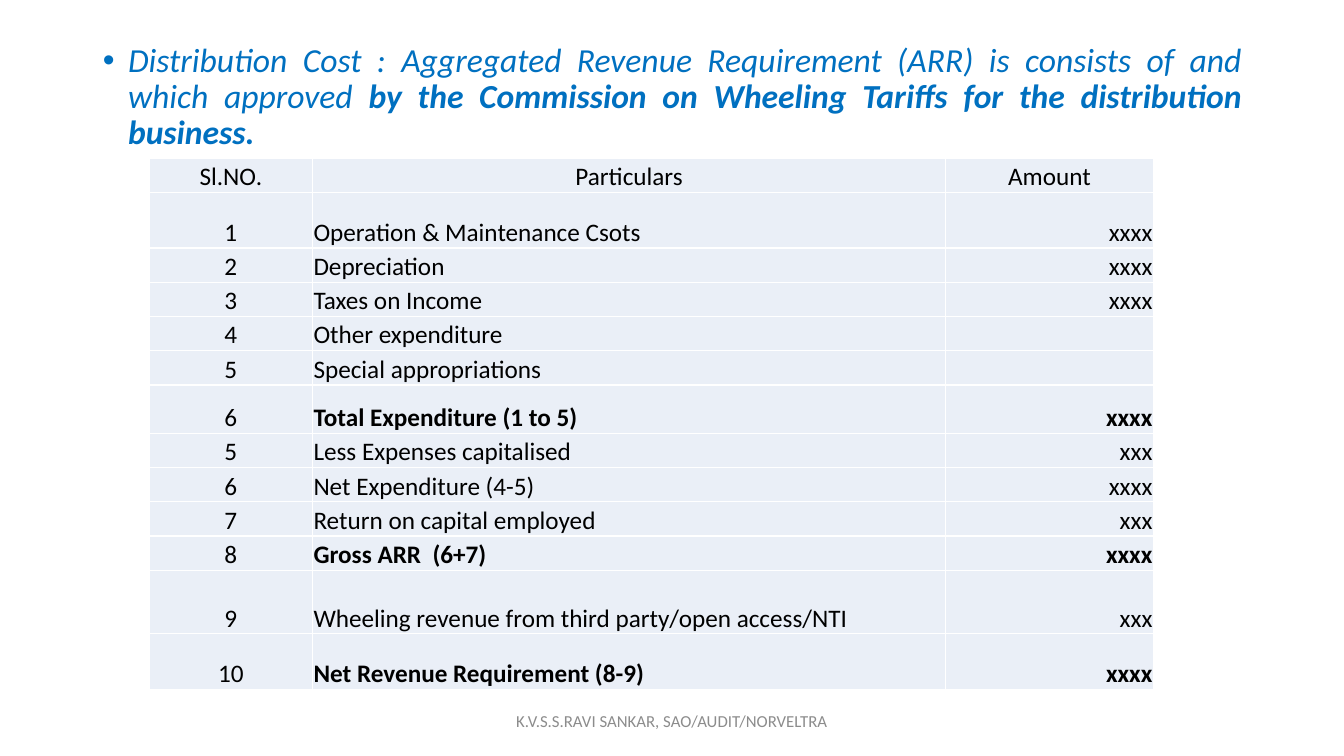
"""Builds a slide listing the parts of the aggregated revenue requirement."""
from lxml import etree
from pptx import Presentation
from pptx import util as u
from pptx.dml.color import RGBColor
from pptx.enum import text
from pptx.oxml import ns

COLOURS = {"heading": "0070C0", "ink": "000000", "cell": "EAEFF7",
           "border": "FFFFFF", "footer": "8C8C8C"}
SIZE = (13.33, 7.5)
HEADING = [
    ("Distribution Cost : Aggregated Revenue Requirement (ARR) is consists of and which approved ", False),
    ("by the Commission on Wheeling Tariffs for the distribution business.", True),
]
FOOTER = "K.V.S.S.RAVI SANKAR, SAO/AUDIT/NORVELTRA"
COLUMNS = [1.62, 6.28, 2.06]
ROW = 0.34
ROWS = [
    ("Sl.NO.", "Particulars", "Amount"),
    ("1", "Operation & Maintenance Csots", "xxxx"),
    ("2", "Depreciation", "xxxx"),
    ("3", "Taxes on Income", "xxxx"),
    ("4", "Other expenditure", ""),
    ("5", "Special appropriations", ""),
    ("6", "Total Expenditure (1 to 5)", "xxxx"),
    ("5", "Less Expenses capitalised", "xxx"),
    ("6", "Net Expenditure (4-5)", "xxxx"),
    ("7", "Return on capital employed", "xxx"),
    ("8", "Gross ARR  (6+7)", "xxxx"),
    ("9", "Wheeling revenue from third party/open access/NTI", "xxx"),
    ("10", "Net Revenue Requirement (8-9)", "xxxx"),
]
TALL_ROWS = {1: 0.55, 6: 0.48, 11: 0.63, 12: 0.55}
BOLD_ROWS = {6, 10, 12}
ALIGN = text.PP_ALIGN
COLUMN_ALIGN = [ALIGN.CENTER, ALIGN.LEFT, ALIGN.RIGHT]
CELL_FORMAT = {"vertical_anchor": text.MSO_ANCHOR.BOTTOM, "margin_left": u.Inches(0.01),
               "margin_right": u.Inches(0.01), "margin_top": u.Inches(0.01), "margin_bottom": 0}


def apply(target, values):
    for name, value in values.items():
        setattr(target, name, value)


def place(box, left, top, width, height):
    apply(box, {"left": u.Inches(left), "top": u.Inches(top),
                "width": u.Inches(width), "height": u.Inches(height)})


def write(para, words, size, colour, bold=False, italic=False):
    span = para.add_run()
    span.text = words
    apply(span.font, {"name": "Calibri", "size": u.Pt(size), "bold": bold, "italic": italic})
    span.font.color.rgb = RGBColor.from_string(COLOURS[colour])


def add_borders(cell):
    properties = cell._tc.get_or_add_tcPr()
    for side in ("lnL", "lnR", "lnT", "lnB"):
        line = etree.SubElement(properties, ns.qn("a:" + side), w=str(u.Pt(1)))
        fill = etree.SubElement(line, ns.qn("a:solidFill"))
        etree.SubElement(fill, ns.qn("a:srgbClr"), val=COLOURS["border"])


def add_heading(page):
    body = page.placeholders[1]
    place(body, 0.92, 0.38, 11.5, 6.79)
    para = body.text_frame.paragraphs[0]
    apply(para, {"alignment": ALIGN.JUSTIFY, "line_spacing": 0.9, "space_before": u.Pt(10)})
    properties = para._p.get_or_add_pPr()
    properties.set("marL", str(u.Inches(0.25)))
    properties.set("indent", str(u.Inches(-0.25)))
    for words, bold in HEADING:
        write(para, words, 24, "heading", bold, True)


def add_costs(page):
    heights = [TALL_ROWS.get(index, ROW) for index in range(len(ROWS))]
    area = [u.Inches(n) for n in (1.48, 1.57, sum(COLUMNS), sum(heights))]
    table = page.shapes.add_table(len(ROWS), len(COLUMNS), *area).table
    apply(table, {"first_row": False, "horz_banding": False})
    for column, width in zip(table.columns, COLUMNS):
        column.width = u.Inches(width)
    for index, values in enumerate(ROWS):
        table.rows[index].height = u.Inches(heights[index])
        for position, words in enumerate(values):
            cell = table.cell(index, position)
            apply(cell, CELL_FORMAT)
            add_borders(cell)
            cell.fill.solid()
            cell.fill.fore_color.rgb = RGBColor.from_string(COLOURS["cell"])
            para = cell.text_frame.paragraphs[0]
            para.alignment = COLUMN_ALIGN[position] if index else ALIGN.CENTER
            if words:
                write(para, words, 18, "ink", index in BOLD_ROWS and position > 0)


def add_footer(page):
    width = 4.5
    box = page.shapes.add_textbox(0, 0, 0, 0)
    place(box, (SIZE[0] - width) / 2, 6.95, width, 0.4)
    apply(box.text_frame, {"word_wrap": True, "vertical_anchor": text.MSO_ANCHOR.MIDDLE})
    para = box.text_frame.paragraphs[0]
    para.alignment = ALIGN.CENTER
    write(para, FOOTER, 12, "footer")


def main():
    deck = Presentation()
    deck.slide_width, deck.slide_height = (u.Inches(n) for n in SIZE)
    page = deck.slides.add_slide(deck.slide_layouts[1])
    title = page.shapes.title.element
    title.getparent().remove(title)
    add_heading(page)
    add_costs(page)
    add_footer(page)
    deck.save("out.pptx")


if __name__ == "__main__":
    main()
